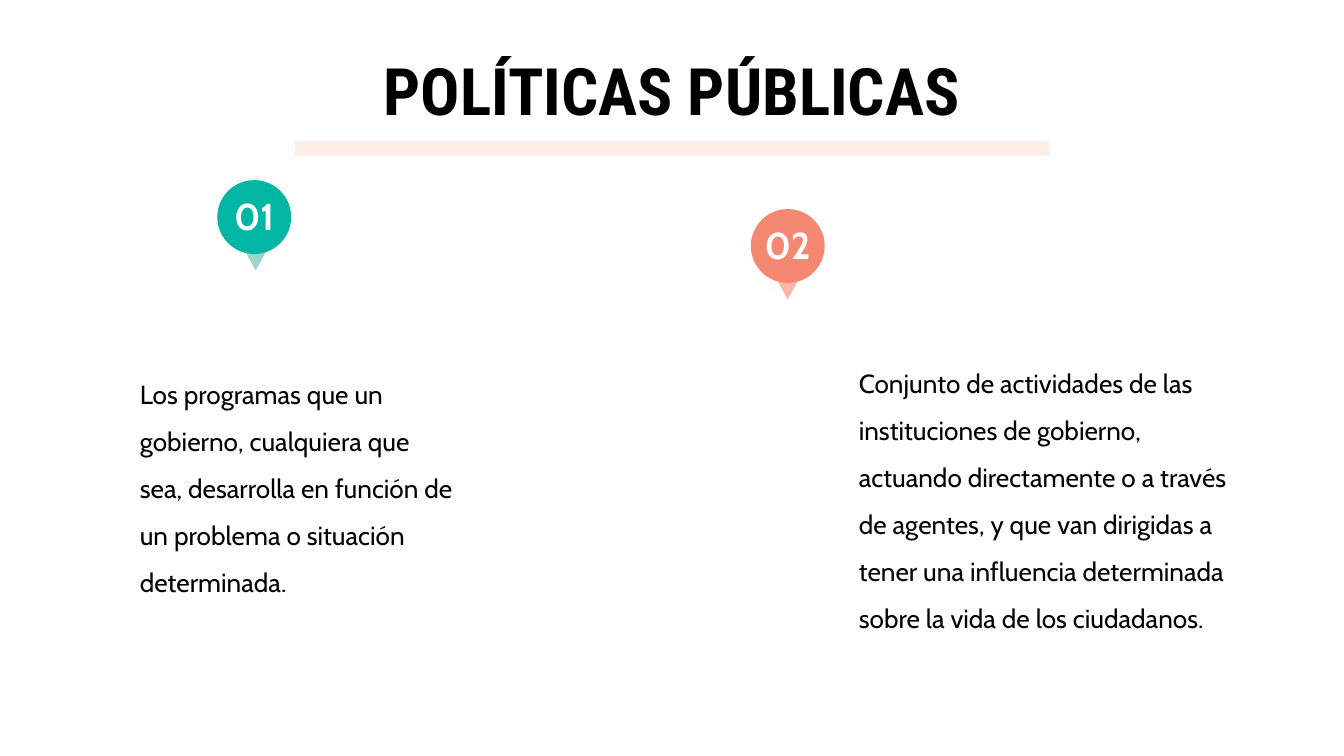
from dataclasses import dataclass

from pptx import Presentation
from pptx.dml.color import RGBColor
from pptx.enum import shapes, text
from pptx.oxml.ns import qn
from pptx.util import Pt


@dataclass
class Box:
    left: float
    top: float
    width: float
    height: float

    def place(self) -> tuple:
        return Pt(self.left), Pt(self.top), Pt(self.width), Pt(self.height)


@dataclass
class Style:
    font: str
    size: float
    color: str
    bold: bool
    align: text.PP_ALIGN
    space: float = 1.0


@dataclass
class Pin:
    label: str
    x: float
    y: float
    tip_x: float
    fill: str
    tip: str


@dataclass
class Note:
    words: str
    box: Box


TITLE = Style("Roboto Condensed", 35, "000000", True, text.PP_ALIGN.CENTER)
BODY = Style("Cabin", 14, "000000", False, text.PP_ALIGN.LEFT, 1.5)
LABEL = Style("Cabin", 20, "FFFFFF", True, text.PP_ALIGN.CENTER)

HEAD = Note("POLÍTICAS PÚBLICAS", Box(24.5, 26.6, 671, 42.5))
NOTES = [
    Note("Los programas que un gobierno, cualquiera que sea, desarrolla en "
         "función de un problema o situación determinada.",
         Box(67.7, 160.6, 184.3, 193)),
    Note("Conjunto de actividades de las instituciones de gobierno, actuando "
         "directamente o a través de agentes, y que van dirigidas a tener una "
         "influencia determinada sobre la vida de los ciudadanos.",
         Box(452.9, 160.6, 216, 206.6)),
]
PINS = [
    Pin("01", 136.2, 116.3, 137, "03B5A3", "9AD6CC"),
    Pin("02", 422, 131.8, 422, "F58870", "FBB7A4"),
]
BAR = Box(158, 75.6, 404, 7.8)
DISC = 39.6
TIP_W, TIP_H, TIP_DROP = 13.7, 12.4, 16.2
LABEL_W, LABEL_H = 42, 31.7


def color(code: str) -> RGBColor:
    return RGBColor.from_string(code)


def draw(slide, kind: shapes.MSO_SHAPE, box: Box, fill: str) -> None:
    shape = slide.shapes.add_shape(kind, *box.place())
    shape.shadow.inherit = False
    shape.fill.solid()
    shape.fill.fore_color.rgb = color(fill)
    shape.line.fill.background()


def write(shape, words: str, style: Style) -> None:
    frame = shape.text_frame
    frame.word_wrap = True
    frame.auto_size = text.MSO_AUTO_SIZE.NONE
    frame.vertical_anchor = text.MSO_ANCHOR.MIDDLE
    frame.margin_left = frame.margin_right = Pt(7.2)
    frame.margin_top = frame.margin_bottom = Pt(7.2)
    para = frame.paragraphs[0]
    para.alignment = style.align
    para.line_spacing = style.space
    para.space_before = para.space_after = Pt(0)
    run = para.add_run()
    run.text = words
    run.font.name = style.font
    run.font.size = Pt(style.size)
    run.font.bold = style.bold
    run.font.color.rgb = color(style.color)


def fill_holder(holder, note: Note, style: Style) -> None:
    holder.left, holder.top, holder.width, holder.height = note.box.place()
    write(holder, note.words, style)


def clear_bullet(holder) -> None:
    props = holder.text_frame.paragraphs[0]._p.get_or_add_pPr()
    props.set("marL", "0")
    props.set("indent", "0")
    props.append(props.makeelement(qn("a:buNone"), {}))


def draw_pin(slide, pin: Pin) -> None:
    tip = Box(pin.tip_x - TIP_W / 2, pin.y + TIP_DROP, TIP_W, TIP_H)
    disc = Box(pin.x - DISC / 2, pin.y - DISC / 2, DISC, DISC)
    label = Box(pin.x - LABEL_W / 2, pin.y - 1 - LABEL_H / 2, LABEL_W, LABEL_H)
    draw(slide, shapes.MSO_SHAPE.FLOWCHART_MERGE, tip, pin.tip)
    draw(slide, shapes.MSO_SHAPE.OVAL, disc, pin.fill)
    write(slide.shapes.add_textbox(*label.place()), pin.label, LABEL)


def main() -> None:
    deck = Presentation()
    deck.slide_width, deck.slide_height = Pt(720), Pt(405)
    slide = deck.slides.add_slide(deck.slide_layouts[3])
    title, *bodies = slide.placeholders
    fill_holder(title, HEAD, TITLE)
    for body, note in zip(bodies, NOTES):
        fill_holder(body, note, BODY)
        clear_bullet(body)
    draw(slide, shapes.MSO_SHAPE.RECTANGLE, BAR, "FFEEE7")
    for pin in PINS:
        draw_pin(slide, pin)
    deck.save("out.pptx")


if __name__ == "__main__":
    main()
